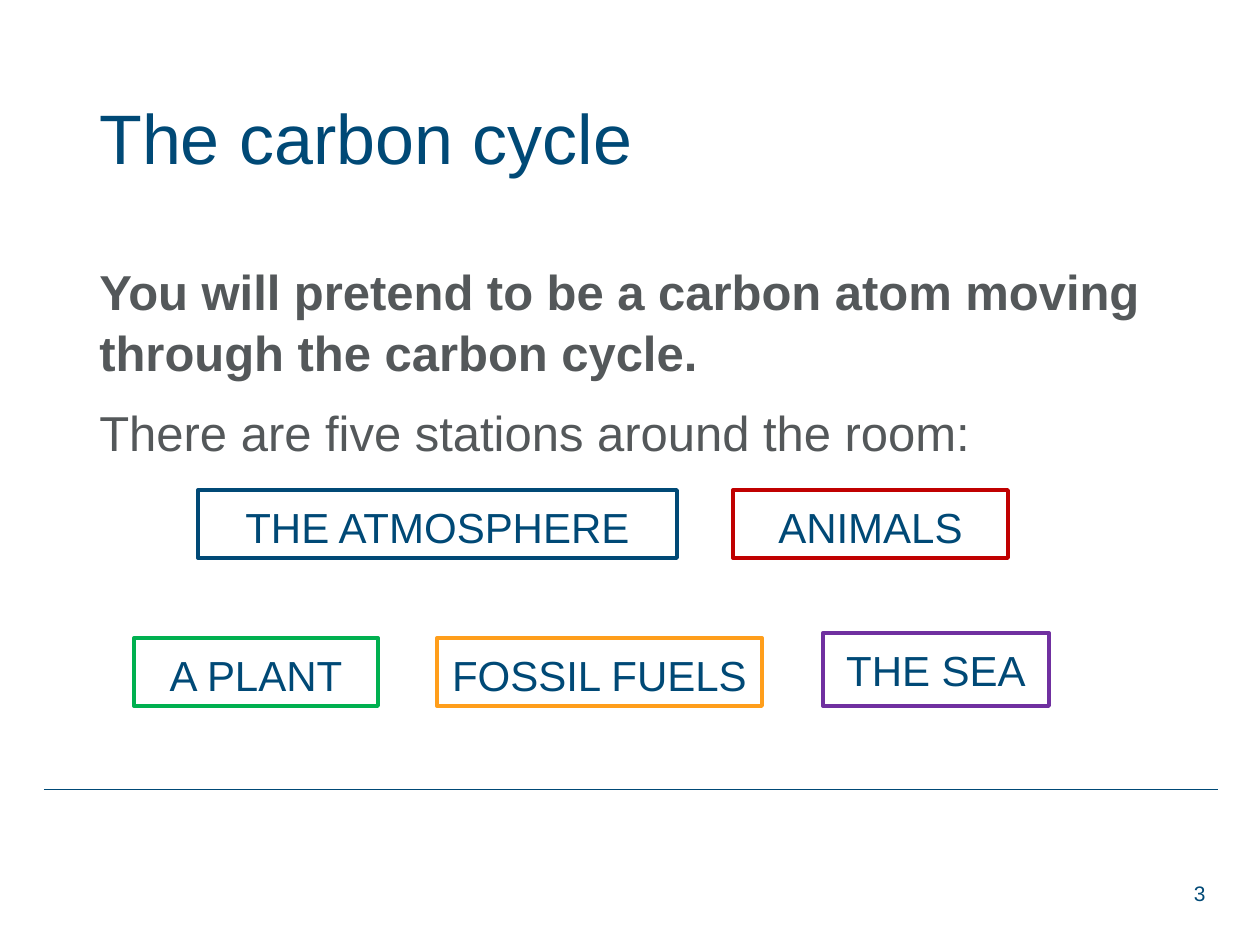
from lxml import etree
from pptx import Presentation
from pptx import util as u
from pptx.dml.color import RGBColor
from pptx.enum import shapes, text
from pptx.oxml.ns import qn

SCALE = 914400 / 126
HEX = {
    "navy": "004976",
    "grey": "54585A",
    "white": "FFFFFF",
    "amber": "FF9E1B",
    "green": "00B050",
    "red": "C00000",
    "purple": "7030A0",
}
STATIONS = [
    ("THE ATMOSPHERE", "navy", 198, 490, 479, 68),
    ("ANIMALS", "red", 733, 490, 275, 68),
    ("A PLANT", "green", 134, 638, 244, 68),
    ("FOSSIL FUELS", "amber", 437, 638, 325, 68),
    ("THE SEA", "purple", 823, 633, 226, 73),
]


def px(n):
    return u.Emu(round(n * SCALE))


def rgb(name):
    return RGBColor.from_string(HEX[name])


def style(par, size, color, align="LEFT", bold=False, lines=1.0):
    par.alignment = getattr(text.PP_ALIGN, align)
    par.line_spacing = lines
    font = par.font
    font.name = "Arial"
    font.size = u.Pt(size)
    font.bold = bold
    font.color.rgb = rgb(color)


def add_text(slide, box, words, anchor="MIDDLE"):
    frame = slide.shapes.add_textbox(*map(px, box)).text_frame
    frame.word_wrap = True
    frame.vertical_anchor = getattr(text.MSO_ANCHOR, anchor)
    frame.text = words
    return frame.paragraphs


def add_rule(slide, left, right, y):
    rule = slide.shapes.add_connector(
        shapes.MSO_CONNECTOR.STRAIGHT, px(left), px(y), px(right), px(y))
    rule.line.color.rgb = rgb("navy")
    rule.line.width = u.Pt(0.5)
    etree.SubElement(rule._element.spPr, qn("a:effectLst"))


def add_station(slide, name, color, *box):
    rect = slide.shapes.add_shape(shapes.MSO_SHAPE.RECTANGLE, *map(px, box))
    rect.shadow.inherit = False
    rect.fill.solid()
    rect.fill.fore_color.rgb = rgb("white")
    rect.line.color.rgb = rgb(color)
    rect.line.width = u.Pt(2.25)
    frame = rect.text_frame
    frame.word_wrap = True
    frame.vertical_anchor = text.MSO_ANCHOR.TOP
    frame.text = name
    style(frame.paragraphs[0], 24, "navy", "CENTER", lines=1.1)


def add_body(slide):
    lead, note = add_text(
        slide, (87, 252, 1086, 470),
        "You will pretend to be a carbon atom moving through the carbon cycle.\n"
        "There are five stations around the room:", "TOP")
    style(lead, 28, "grey", bold=True, lines=1.05)
    style(note, 28, "grey", lines=1.05)
    note.space_before = u.Pt(10)


def main():
    deck = Presentation()
    deck.slide_width, deck.slide_height = px(1260), px(945)
    slide = deck.slides.add_slide(deck.slide_layouts[6])
    add_rule(slide, 44, 1218, 789)
    number = add_text(slide, (935, 868, 283, 50), "3")
    style(number[0], 12, "navy", "RIGHT")
    title = add_text(slide, (87, 50, 1086, 183), "The carbon cycle")
    style(title[0], 40, "navy", lines=0.9)
    add_body(slide)
    for station in STATIONS:
        add_station(slide, *station)
    deck.save("out.pptx")


if __name__ == "__main__":
    main()
